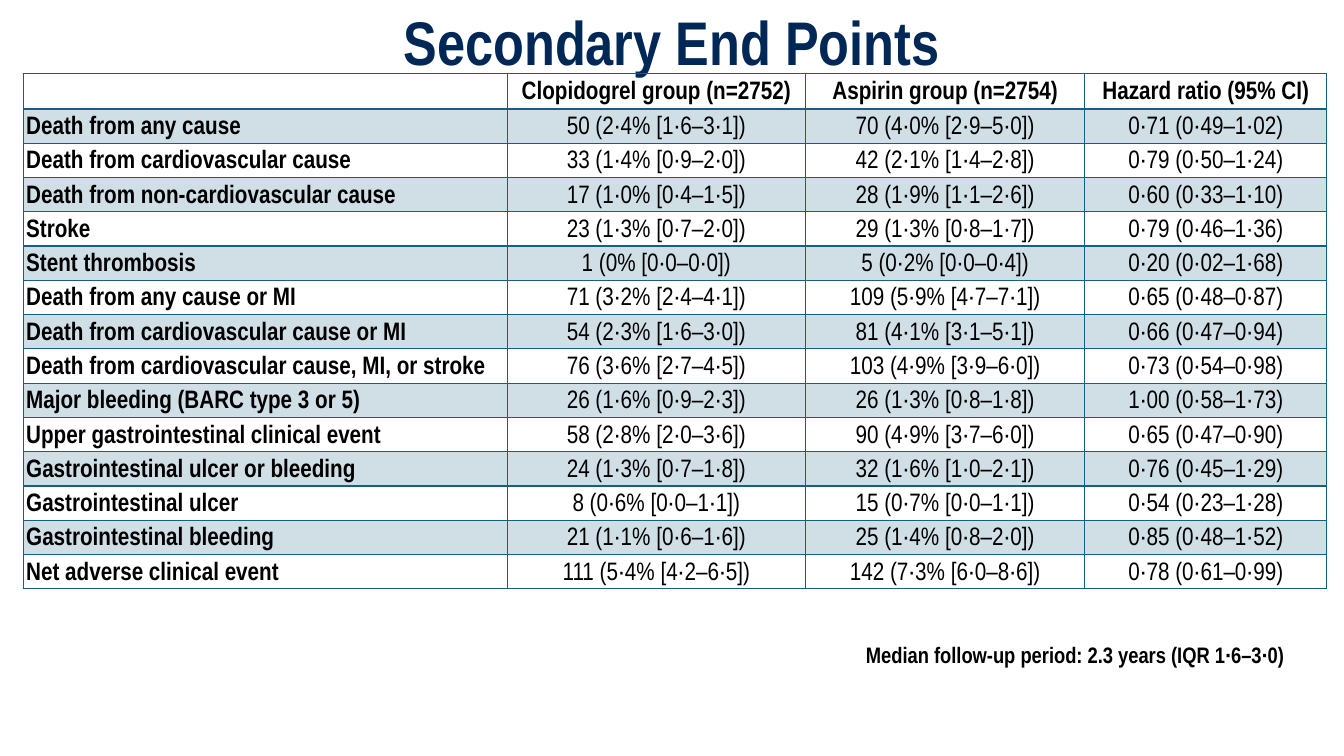
from lxml.etree import SubElement
from pptx import Presentation
from pptx.dml.color import RGBColor
from pptx.enum.text import MSO_ANCHOR, PP_ALIGN
from pptx.oxml import parse_xml
from pptx.oxml.ns import nsdecls, qn
from pptx.util import Inches, Pt

HUES = {"title": "002856", "edge": "002060", "teal": "156082", "text": "000000"}
FACE = "Arial Narrow"
WIDE, HIGH = 13.33, 7.5
COLS = [4.8, 2.96, 2.77, 2.4]
HEAD, ROW = 0.35, 0.33
DATA = [
    ("", "Clopidogrel group (n=2752)", "Aspirin group (n=2754)", "Hazard ratio (95% CI)"),
    ("Death from any cause", "50 (2·4% [1·6–3·1])", "70 (4·0% [2·9–5·0])", "0·71 (0·49–1·02)"),
    ("Death from cardiovascular cause", "33 (1·4% [0·9–2·0])", "42 (2·1% [1·4–2·8])", "0·79 (0·50–1·24)"),
    ("Death from non-cardiovascular cause", "17 (1·0% [0·4–1·5])", "28 (1·9% [1·1–2·6])", "0·60 (0·33–1·10)"),
    ("Stroke", "23 (1·3% [0·7–2·0])", "29 (1·3% [0·8–1·7])", "0·79 (0·46–1·36)"),
    ("Stent thrombosis", "1 (0% [0·0–0·0])", "5 (0·2% [0·0–0·4])", "0·20 (0·02–1·68)"),
    ("Death from any cause or MI", "71 (3·2% [2·4–4·1])", "109 (5·9% [4·7–7·1])", "0·65 (0·48–0·87)"),
    ("Death from cardiovascular cause or MI", "54 (2·3% [1·6–3·0])", "81 (4·1% [3·1–5·1])", "0·66 (0·47–0·94)"),
    ("Death from cardiovascular cause, MI, or stroke", "76 (3·6% [2·7–4·5])", "103 (4·9% [3·9–6·0])", "0·73 (0·54–0·98)"),
    ("Major bleeding (BARC type 3 or 5)", "26 (1·6% [0·9–2·3])", "26 (1·3% [0·8–1·8])", "1·00 (0·58–1·73)"),
    ("Upper gastrointestinal clinical event", "58 (2·8% [2·0–3·6])", "90 (4·9% [3·7–6·0])", "0·65 (0·47–0·90)"),
    ("Gastrointestinal ulcer or bleeding", "24 (1·3% [0·7–1·8])", "32 (1·6% [1·0–2·1])", "0·76 (0·45–1·29)"),
    ("Gastrointestinal ulcer", "8 (0·6% [0·0–1·1])", "15 (0·7% [0·0–1·1])", "0·54 (0·23–1·28)"),
    ("Gastrointestinal bleeding", "21 (1·1% [0·6–1·6])", "25 (1·4% [0·8–2·0])", "0·85 (0·48–1·52)"),
    ("Net adverse clinical event", "111 (5·4% [4·2–6·5])", "142 (7·3% [6·0–8·6])", "0·78 (0·61–0·99)"),
]


def style(para, size, hue, bold=True):
    font = para.font
    font.name, font.size, font.bold = FACE, Pt(size), bold
    font.color.rgb = RGBColor.from_string(HUES[hue])


def line(tag, width, hue):
    return parse_xml(
        f'<a:{tag} {nsdecls("a")} w="{Pt(width)}"><a:solidFill>'
        f'<a:srgbClr val="{HUES[hue]}"/></a:solidFill></a:{tag}>'
    )


def write(slide, box, text, size, hue):
    frame = slide.shapes.add_textbox(*map(Inches, box)).text_frame
    frame.word_wrap = True
    para = frame.paragraphs[0]
    para.text = text
    style(para, size, hue)
    return frame


def add_title(slide, box):
    frame = write(slide, box, "Secondary End Points", 44, "title")
    frame.vertical_anchor = MSO_ANCHOR.MIDDLE
    para = frame.paragraphs[0]
    para.alignment = PP_ALIGN.CENTER
    para.line_spacing = 0.9
    para._p.pPr.find(qn("a:defRPr")).insert(0, line("ln", 0.75, "edge"))


def fill_cell(cell, text, row, col):
    cell.margin_left = cell.margin_right = Inches(0.03)
    cell.margin_top, cell.margin_bottom = Inches(0.04), 0
    cell.vertical_anchor = MSO_ANCHOR.MIDDLE
    para = cell.text_frame.paragraphs[0]
    para.text = text
    para.alignment = PP_ALIGN.CENTER if col else PP_ALIGN.LEFT
    style(para, 18, "text", row == 0 or col == 0)
    props = cell._tc.get_or_add_tcPr()
    if row % 2:
        cell.fill.solid()
        cell.fill.fore_color.rgb = RGBColor.from_string(HUES["teal"])
        tint = props.find(qn("a:solidFill")).find(qn("a:srgbClr"))
        SubElement(tint, qn("a:alpha")).set("val", "20000")
    else:
        cell.fill.background()
    sides = {"lnL": 1, "lnR": 1, "lnT": 2 if row == 1 else 1, "lnB": 1 if row else 2}
    for spot, (tag, width) in enumerate(sides.items()):
        props.insert(spot, line(tag, width, "teal"))


def add_grid(slide, left, top):
    size = sum(COLS), HEAD + ROW * (len(DATA) - 1)
    table = slide.shapes.add_table(
        len(DATA), len(COLS), *map(Inches, (left, top, *size))
    ).table
    table.first_row = table.horz_banding = False
    for col, width in enumerate(COLS):
        table.columns[col].width = Inches(width)
    for row, texts in enumerate(DATA):
        table.rows[row].height = Inches(ROW if row else HEAD)
        for col, text in enumerate(texts):
            fill_cell(table.cell(row, col), text, row, col)


def main():
    deck = Presentation()
    deck.slide_width, deck.slide_height = Inches(WIDE), Inches(HIGH)
    slide = deck.slides.add_slide(deck.slide_layouts[6])
    add_title(slide, (0, 0, WIDE, 0.91))
    add_grid(slide, 0.23, 0.73)
    note = "Median follow-up period: 2.3 years (IQR 1·6–3·0)"
    write(slide, (8.49, 6.31, WIDE - 8.49, 0.37), note, 16, "text")
    deck.save("out.pptx")


if __name__ == "__main__":
    main()
